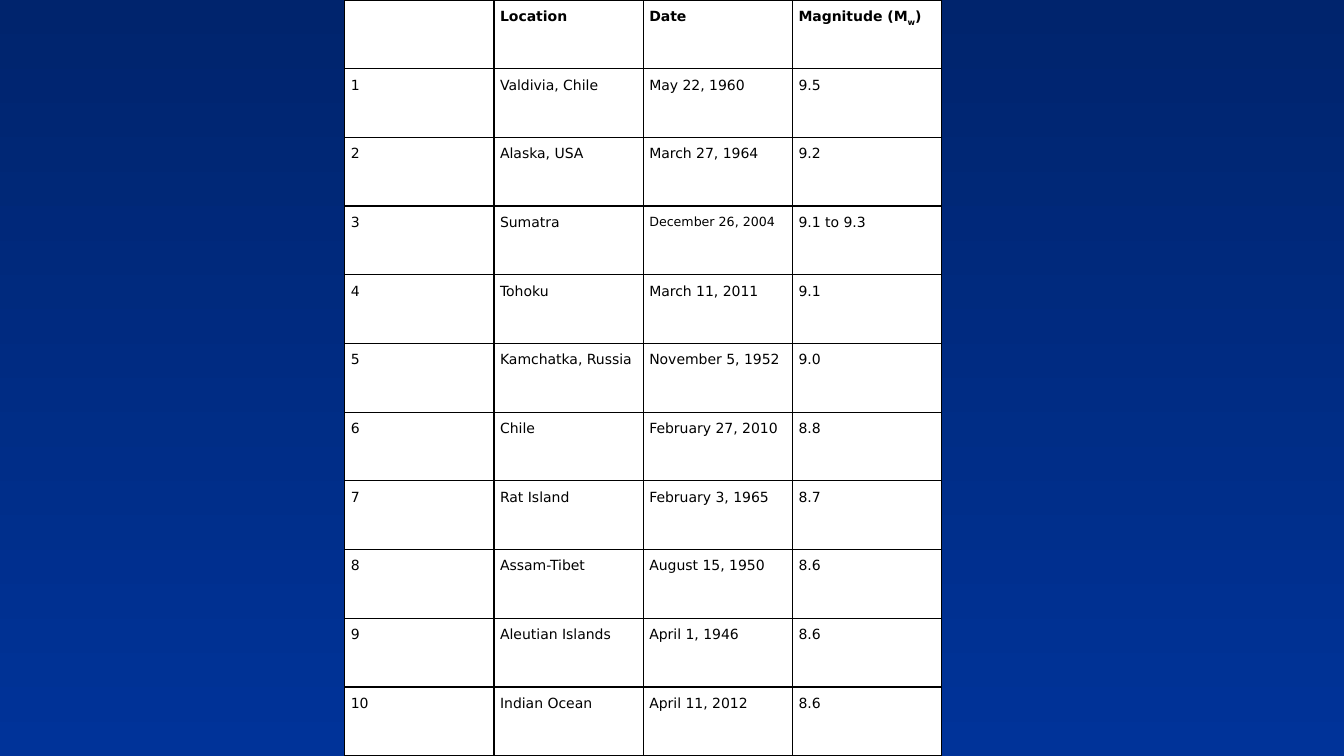
"""Build a slide with a table of the ten largest earthquakes."""
from dataclasses import dataclass

from lxml import etree
from pptx import Presentation
from pptx.dml.color import RGBColor
from pptx.enum.text import PP_ALIGN
from pptx.oxml.ns import qn
from pptx.util import Inches, Pt

JUSTIFY = PP_ALIGN.JUSTIFY


@dataclass(frozen=True)
class Theme:
    background_top: str = "00246D"
    background_bottom: str = "003399"
    cell: str = "FFFFFF"
    ink: str = "000000"
    font: str = "DejaVu Sans"
    body_size: int = 10
    long_date_size: int = 9


theme = Theme()
SLIDE_WIDTH, SLIDE_HEIGHT = 13.33, 7.5
TABLE_LEFT, TABLE_WIDTH = 3.42, 5.92
CELL_MARGIN = 0.06
LONG_DATE = "December 26, 2004"

header = ["", "Location", "Date", "Magnitude (M"]
earthquakes = [
    ("Valdivia, Chile", "May 22, 1960", "9.5"),
    ("Alaska, USA", "March 27, 1964", "9.2"),
    ("Sumatra", LONG_DATE, "9.1 to 9.3"),
    ("Tohoku", "March 11, 2011", "9.1"),
    ("Kamchatka, Russia", "November 5, 1952", "9.0"),
    ("Chile", "February 27, 2010", "8.8"),
    ("Rat Island", "February 3, 1965", "8.7"),
    ("Assam-Tibet", "August 15, 1950", "8.6"),
    ("Aleutian Islands", "April 1, 1946", "8.6"),
    ("Indian Ocean", "April 11, 2012", "8.6"),
]
rows = [header] + [[str(rank), *quake] for rank, quake in enumerate(earthquakes, 1)]


def add_run(paragraph, text, bold):
    run = paragraph.add_run()
    run.text = text
    run.font.name = theme.font
    run.font.size = Pt(theme.long_date_size if text == LONG_DATE else theme.body_size)
    run.font.bold = bold
    run.font.color.rgb = RGBColor.from_string(theme.ink)
    return run


def add_borders(cell):
    properties = cell._tc.get_or_add_tcPr()
    for side in ("lnL", "lnR", "lnT", "lnB"):
        line = etree.SubElement(properties, qn(f"a:{side}"), w=str(Pt(1)))
        fill = etree.SubElement(line, qn("a:solidFill"))
        etree.SubElement(fill, qn("a:srgbClr"), val=theme.ink)


presentation = Presentation()
presentation.slide_width = Inches(SLIDE_WIDTH)
presentation.slide_height = Inches(SLIDE_HEIGHT)
slide = presentation.slides.add_slide(presentation.slide_layouts[6])

background = slide.background.fill
background.gradient()
background.gradient_angle = 270
for stop, color in zip(background.gradient_stops, (theme.background_top, theme.background_bottom)):
    stop.color.rgb = RGBColor.from_string(color)

table = slide.shapes.add_table(
    len(rows), len(header), Inches(TABLE_LEFT), Inches(0), Inches(TABLE_WIDTH), Inches(SLIDE_HEIGHT)
).table
table.horz_banding = False
for row in table.rows:
    row.height = Inches(SLIDE_HEIGHT / len(rows))

for row_index, values in enumerate(rows):
    for column_index, text in enumerate(values):
        cell = table.cell(row_index, column_index)
        add_borders(cell)
        cell.fill.solid()
        cell.fill.fore_color.rgb = RGBColor.from_string(theme.cell)
        cell.margin_left = cell.margin_right = Inches(CELL_MARGIN)
        cell.margin_top = cell.margin_bottom = Inches(CELL_MARGIN)
        if text:
            paragraph = cell.text_frame.paragraphs[0]
            paragraph.alignment = JUSTIFY
            paragraph.line_spacing = 1.15
            paragraph.space_after = Pt(10)
            add_run(paragraph, text, row_index == 0)

magnitude_heading = table.cell(0, 3).text_frame.paragraphs[0]
subscript = add_run(magnitude_heading, "w", True)
subscript._r.get_or_add_rPr().set("baseline", "-25000")
add_run(magnitude_heading, ")", True)

presentation.save("out.pptx")
